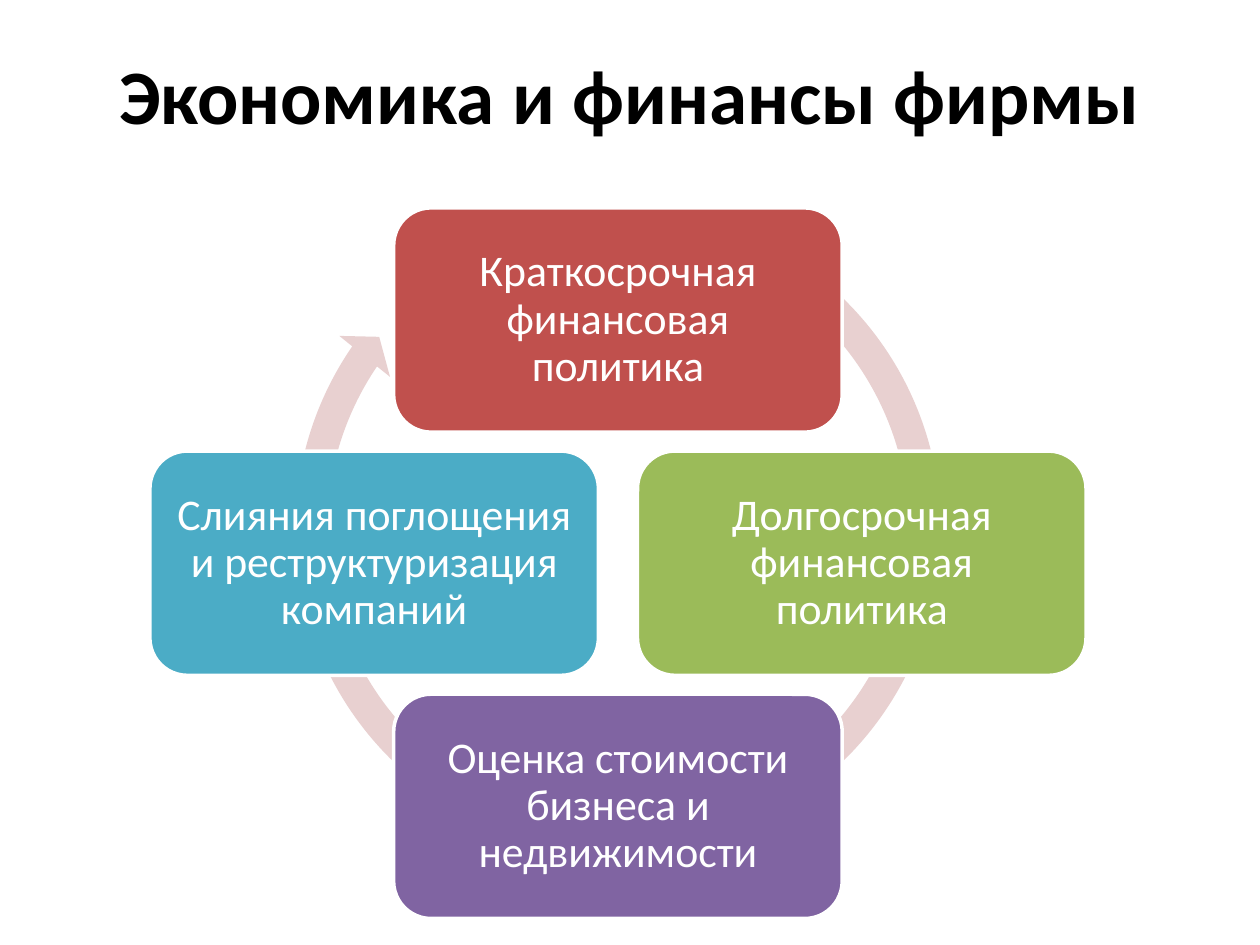
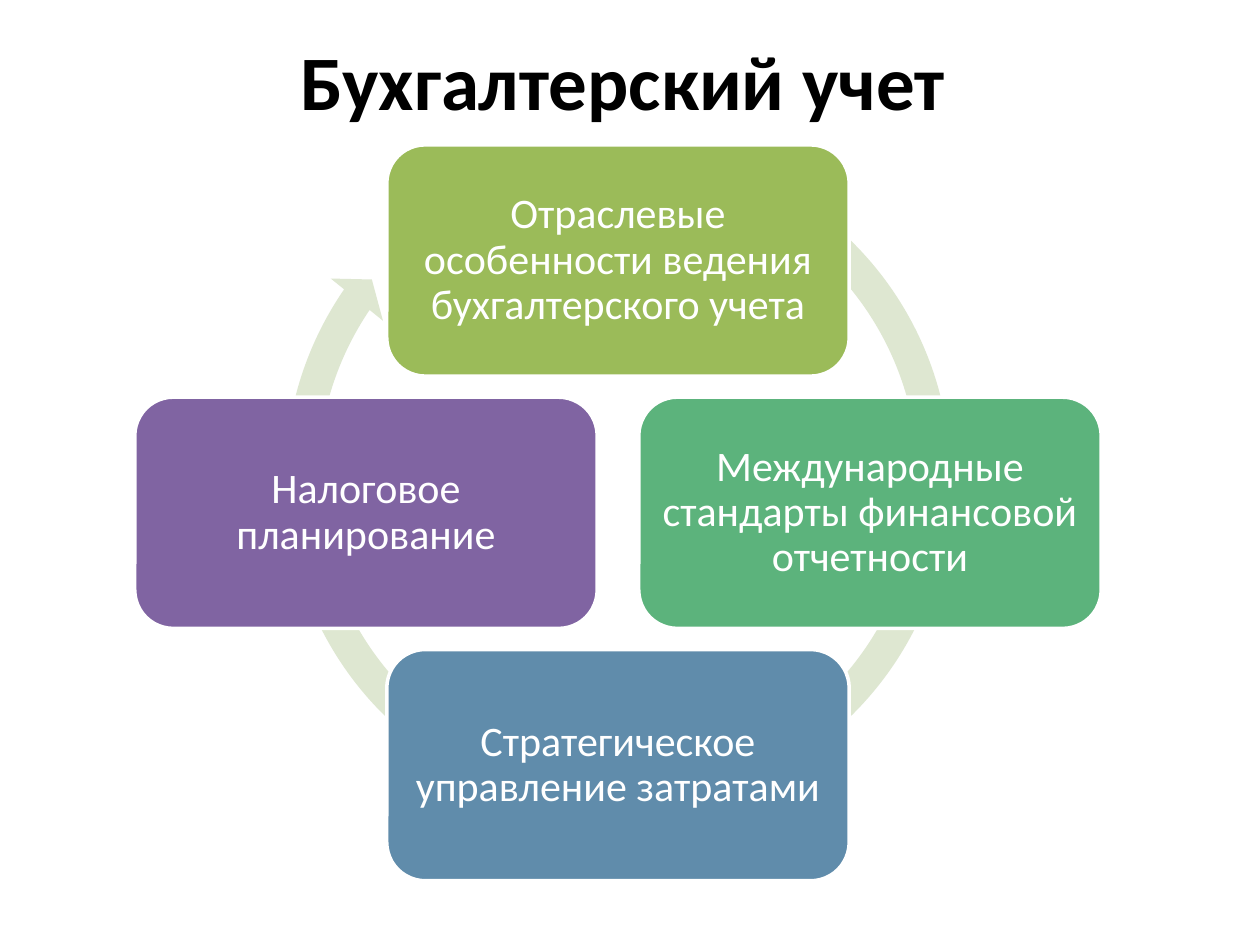
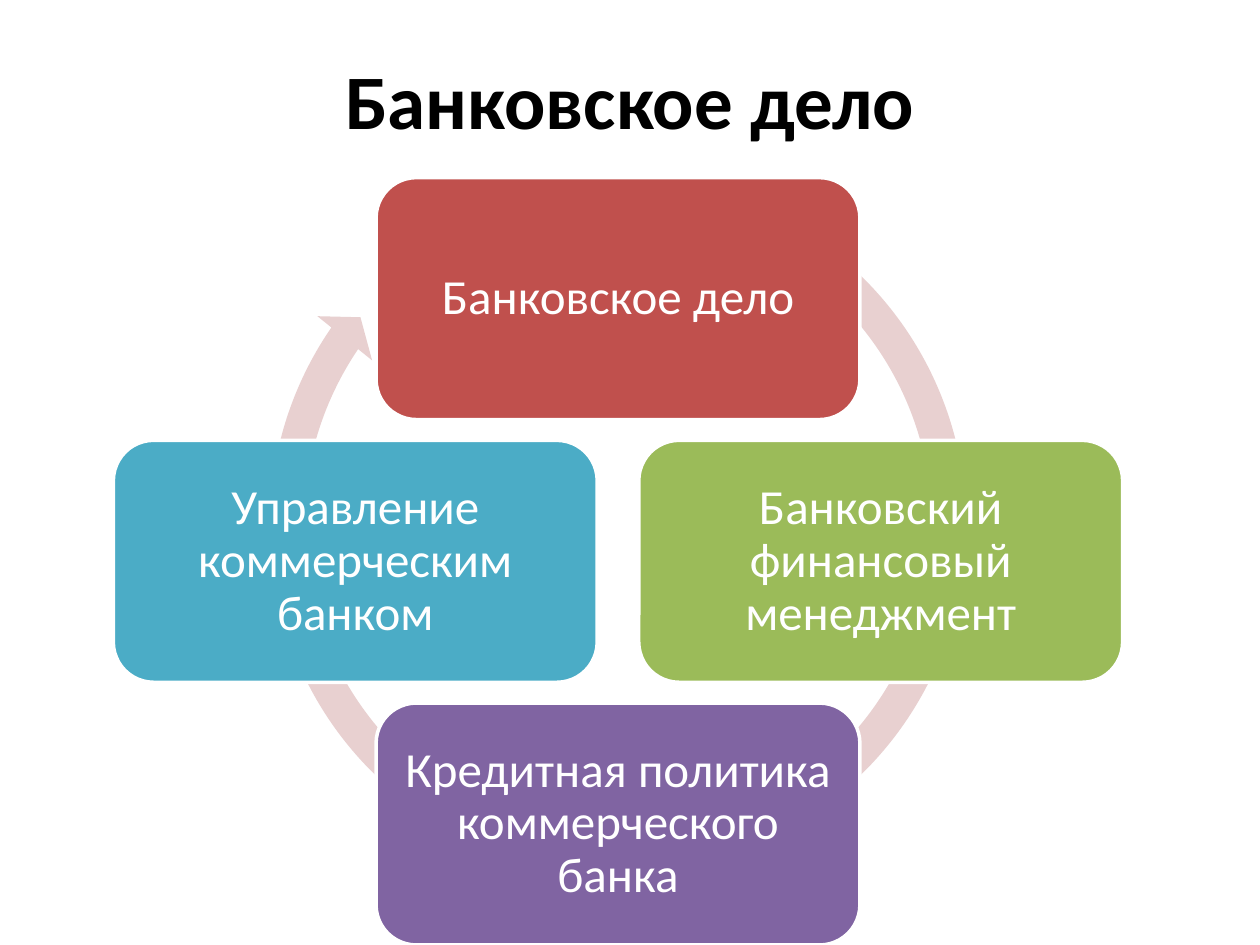
from pptx import Presentation
from pptx import util as u
from pptx.dml.color import RGBColor
from pptx.enum import shapes, text

FONT = "Calibri"
COLORS = {
    "black": "000000",
    "white": "FFFFFF",
    "red": "C0504D",
    "green": "9BBB59",
    "emerald": "5CB37C",
    "steel": "608CAB",
    "purple": "8064A2",
    "teal": "4BACC6",
    "pale_red": "E8D0D0",
    "pale_green": "DEE7D1",
}
RING_TO_CARD = 1.514
RING_RISE = 0.0745
RING_ADJUSTMENTS = (0.0467, 2.729, 128.63, 180.09, 0.048)
CARD_DIRECTIONS = ((0, -1), (1, 0), (0, 1), (-1, 0))

SLIDES = [
    {
        "title": "Экономика и финансы фирмы",
        "title_box": (0.5, 0.12, 9, 1.25),
        "cycle_box": (1.19, 1.65, 7.43, 5.64),
        "card_width": 3.56,
        "inset": 0.1,
        "size": 25,
        "ring": "pale_red",
        "cards": [
            ("Краткосрочная финансовая политика", "red"),
            ("Долгосрочная финансовая политика", "green"),
            ("Оценка стоимости бизнеса и недвижимости", "purple"),
            ("Слияния поглощения и реструктуризация компаний", "teal"),
        ],
    },
    {
        "title": "Бухгалтерский учет",
        "title_box": (-0.4, 0.01, 10.69, 1.25),
        "cycle_box": (1.07, 1.15, 7.67, 5.84),
        "card_width": 3.67,
        "inset": 0.1,
        "size": 24,
        "ring": "pale_green",
        "cards": [
            ("Отраслевые особенности ведения бухгалтерского учета", "green"),
            ("Международные стандарты финансовой отчетности", "emerald"),
            ("Стратегическое управление затратами", "steel"),
            ("Налоговое планирование", "purple"),
        ],
    },
    {
        "title": "Банковское дело",
        "title_box": (0.5, 0.16, 9, 1.25),
        "cycle_box": (0.9, 1.41, 8.01, 6.09),
        "card_width": 3.84,
        "inset": 0.12,
        "size": 28,
        "ring": "pale_red",
        "cards": [
            ("Банковское дело", "red"),
            ("Банковский финансовый менеджмент", "green"),
            ("Кредитная политика коммерческого банка", "purple"),
            ("Управление коммерческим банком", "teal"),
        ],
    },
]


def color(name):
    return RGBColor.from_string(COLORS[name])


def write(frame, words, size, color_name, bold=False):
    frame.word_wrap = True
    frame.vertical_anchor = text.MSO_ANCHOR.MIDDLE
    paragraph = frame.paragraphs[0]
    paragraph.alignment = text.PP_ALIGN.CENTER
    run = paragraph.add_run()
    run.text = words
    run.font.name = FONT
    run.font.size = u.Pt(size)
    run.font.bold = bold
    run.font.color.rgb = color(color_name)
    return paragraph


def add_title(slide, words, box):
    title = slide.shapes.title
    title.left, title.top, title.width, title.height = map(u.Inches, box)
    write(title.text_frame, words, 44, "black", bold=True)


def add_centered(slide, kind, center_x, center_y, width, height, fill):
    shape = slide.shapes.add_shape(
        kind,
        u.Inches(center_x - width / 2),
        u.Inches(center_y - height / 2),
        u.Inches(width),
        u.Inches(height),
    )
    shape.shadow.inherit = False
    shape.fill.solid()
    shape.fill.fore_color.rgb = color(fill)
    return shape


def add_ring(slide, center_x, center_y, size, fill):
    ring = add_centered(slide, shapes.MSO_SHAPE.CIRCULAR_ARROW,
                        center_x, center_y, size, size, fill)
    ring.line.fill.background()
    for index, value in enumerate(RING_ADJUSTMENTS):
        ring.adjustments[index] = value


def add_card(slide, center_x, center_y, width, height, fill, words, size, inset):
    card = add_centered(slide, shapes.MSO_SHAPE.ROUNDED_RECTANGLE,
                        center_x, center_y, width, height, fill)
    card.line.color.rgb = color("white")
    card.line.width = u.Pt(2)
    frame = card.text_frame
    frame.margin_left = frame.margin_right = u.Inches(inset)
    frame.margin_top = frame.margin_bottom = u.Inches(inset)
    write(frame, words, size, "white").line_spacing = 0.9


def add_cycle(slide, box, card_width, ring, cards, size, inset):
    left, top, width, height = box
    center_x, center_y = left + width / 2, top + height / 2
    card_height = card_width / 2
    step_x, step_y = (width - card_width) / 2, (height - card_height) / 2
    add_ring(slide, center_x, center_y - RING_RISE * card_width,
             RING_TO_CARD * card_width, ring)
    for (across, down), (words, fill) in zip(CARD_DIRECTIONS, cards):
        add_card(slide, center_x + across * step_x, center_y + down * step_y,
                 card_width, card_height, fill, words, size, inset)


def add_cycle_slide(presentation, content):
    slide = presentation.slides.add_slide(presentation.slide_layouts[5])
    add_title(slide, content["title"], content["title_box"])
    add_cycle(slide, content["cycle_box"], content["card_width"], content["ring"],
              content["cards"], content["size"], content["inset"])


def main():
    presentation = Presentation()
    presentation.slide_width = u.Inches(10)
    presentation.slide_height = u.Inches(7.5)
    for content in SLIDES:
        add_cycle_slide(presentation, content)
    presentation.save("out.pptx")


if __name__ == "__main__":
    main()
